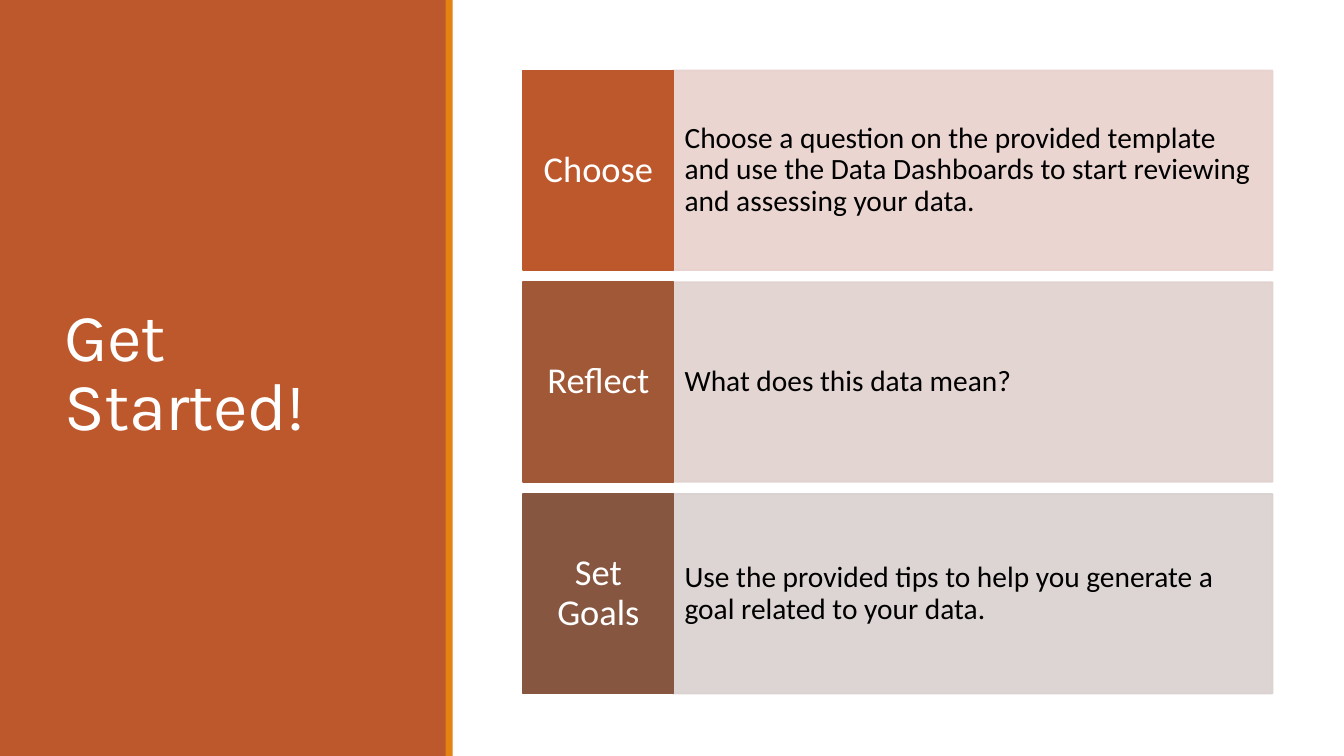
from dataclasses import dataclass
from typing import Any

from lxml import etree
from pptx import Presentation
from pptx import util as u
from pptx.dml.color import RGBColor
from pptx.enum import shapes, text
from pptx.oxml import ns


@dataclass(frozen=True)
class Theme:
    rust: str = "BD582C"
    gold: str = "E48312"
    white: str = "FFFFFF"
    black: str = "000000"
    head: str = "Karla"
    body: str = "Calibri"
    big: float = 48
    mid: float = 26
    small: float = 21


@dataclass(frozen=True)
class Box:
    left: float
    top: float
    width: float
    height: float

    def spots(self) -> list[int]:
        return [u.Inches(n) for n in (self.left, self.top, self.width, self.height)]


@dataclass(frozen=True)
class Step:
    label: str
    detail: str
    dark: str
    pale: str


@dataclass(frozen=True)
class Style:
    font: str
    size: float
    color: str
    align: Any
    space: float
    side: float
    edge: float


THEME = Theme()
LEFT, RIGHT = text.PP_ALIGN.LEFT, text.PP_ALIGN.CENTER
TITLE = Style(THEME.head, THEME.big, THEME.white, LEFT, 0.85, 0.1, 0.05)
LABEL = Style(THEME.body, THEME.mid, THEME.white, RIGHT, 0.9, 0.08, 0.2)
DETAIL = Style(THEME.body, THEME.small, THEME.black, LEFT, 0.9, 0.12, 0.5)

STEPS = [
    Step("Choose", "Choose a question on the provided template and use the Data "
         "Dashboards to start reviewing and assessing your data.", "BD582C", "E8D1CD"),
    Step("Reflect", "What does this data mean?", "A05837", "E1D1CE"),
    Step("Set Goals", "Use the provided tips to help you generate a goal related "
         "to your data.", "865640", "D9D1CF"),
]
TOP, PITCH, TALL = 0.7, 2.1, 1.98


def apply(item: Any, values: dict[str, Any]) -> None:
    for name, value in values.items():
        setattr(item, name, value)


def write(shape: Any, words: str, style: Style) -> None:
    frame = shape.text_frame
    side, edge = u.Inches(style.side), u.Inches(style.edge)
    apply(frame, {
        "text": words,
        "word_wrap": True,
        "auto_size": text.MSO_AUTO_SIZE.NONE,
        "vertical_anchor": text.MSO_ANCHOR.MIDDLE,
        "margin_left": side,
        "margin_right": side,
        "margin_top": edge,
        "margin_bottom": edge,
    })
    para = frame.paragraphs[0]
    apply(para, {"alignment": style.align, "line_spacing": style.space})
    font = para.runs[0].font
    apply(font, {"name": style.font, "size": u.Pt(style.size)})
    font.color.rgb = RGBColor.from_string(style.color)


def block(slide: Any, box: Box, color: str, line: float = 0, alpha: int = 100) -> Any:
    shape = slide.shapes.add_shape(shapes.MSO_SHAPE.RECTANGLE, *box.spots())
    shape.shadow.inherit = False
    shape.fill.solid()
    shape.fill.fore_color.rgb = RGBColor.from_string(color)
    if line:
        shape.line.width = u.Pt(line)
        shape.line.color.rgb = RGBColor.from_string(color)
    else:
        shape.line.fill.background()
    if alpha < 100:
        for node in shape.element.spPr.iter(ns.qn("a:srgbClr")):
            etree.SubElement(node, ns.qn("a:alpha"), val=str(alpha * 1000))
    return shape


def main() -> None:
    deck = Presentation()
    apply(deck, {"slide_width": u.Inches(13.33), "slide_height": u.Inches(7.5)})
    slide = deck.slides.add_slide(deck.slide_layouts[5])

    panel = block(slide, Box(0, 0, 4.43, 7.5), THEME.rust)
    title = slide.shapes.title
    names = ("left", "top", "width", "height")
    apply(title, dict(zip(names, Box(0.54, 0.57, 3.37, 6.31).spots())))
    write(title, "Get Started!", TITLE)
    title.text_frame.paragraphs[0].runs[0].font._element.set("spc", "-50")
    panel.element.addnext(title.element)
    block(slide, Box(4.42, 0, 0.07, 7.5), THEME.gold)

    for row, step in enumerate(STEPS):
        top = TOP + row * PITCH
        detail = block(slide, Box(6.67, top, 5.95, TALL), step.pale, 1.25, 90)
        write(detail, step.detail, DETAIL)
        label = block(slide, Box(5.19, top, 1.49, TALL), step.dark, 1.25)
        write(label, step.label, LABEL)

    deck.save("out.pptx")


if __name__ == "__main__":
    main()
